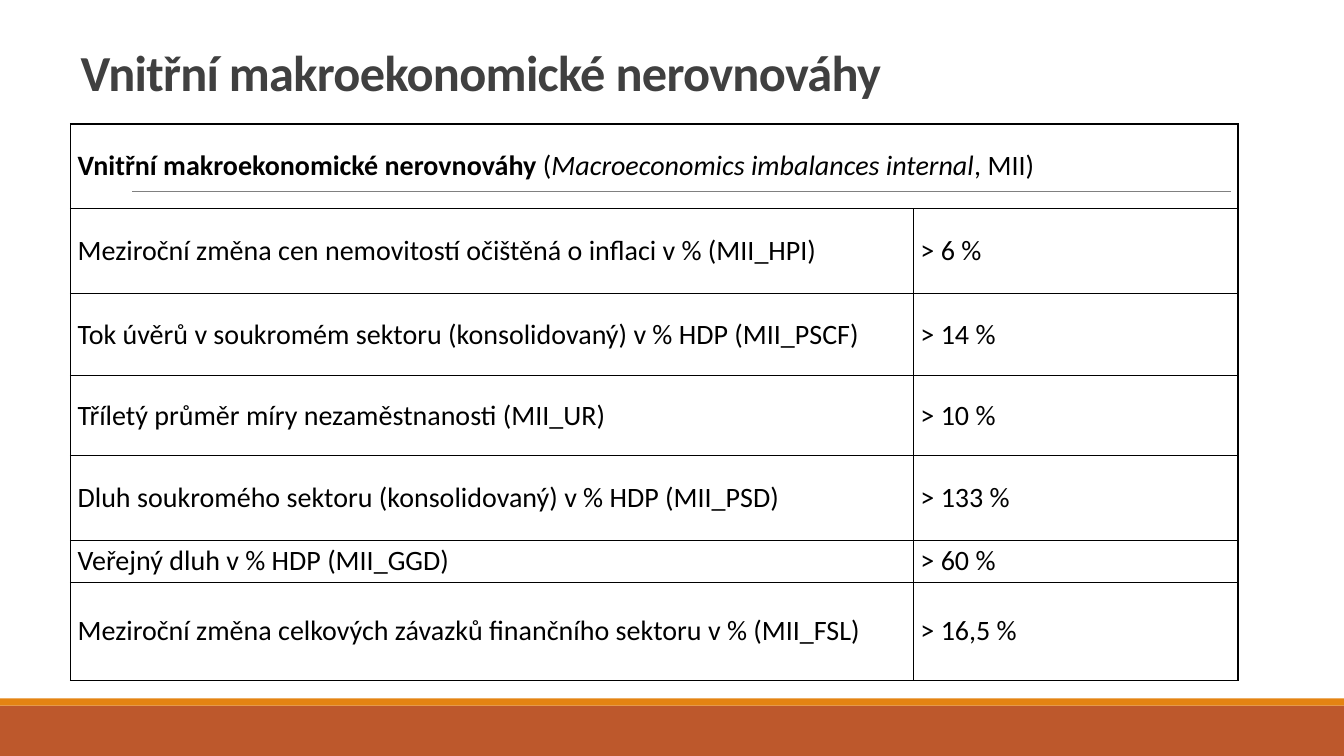
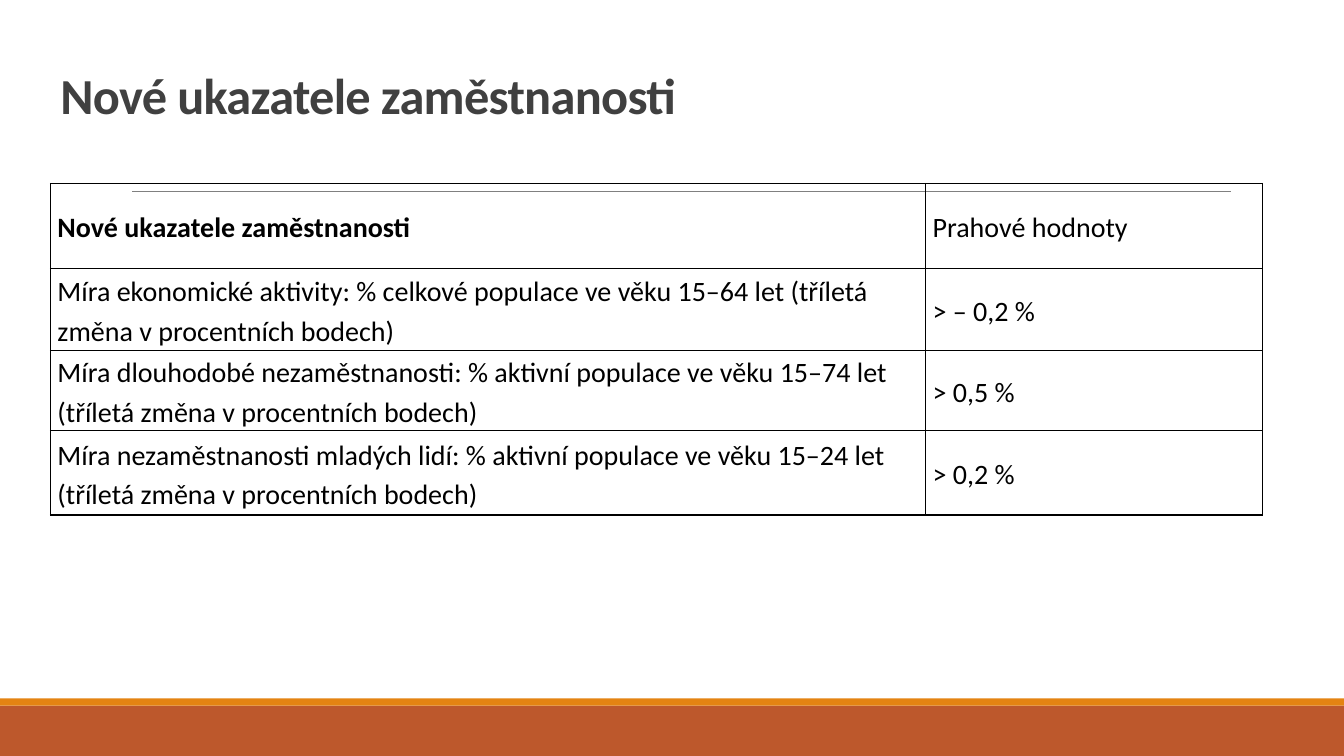
from lxml.etree import SubElement
from pptx import Presentation
from pptx.dml.color import RGBColor
from pptx.enum.shapes import MSO_CONNECTOR, MSO_SHAPE
from pptx.enum.text import MSO_ANCHOR, PP_ALIGN
from pptx.oxml.ns import qn
from pptx.util import Inches, Pt

RUST = RGBColor(0xBD, 0x58, 0x2C)
ORANGE = RGBColor(0xE4, 0x83, 0x12)
GRAY = RGBColor(0x80, 0x80, 0x80)
DARK = RGBColor(0x40, 0x40, 0x40)
BLACK = RGBColor(0, 0, 0)
FONT = "Calibri"

# Each cell is a list of (text, style) runs; a row of one cell spans the table.
SLIDES = [
    {
        "title": "Vnitřní makroekonomické nerovnováhy",
        "place": (0.7, 0.3, 11.58, 0.76),
        "corner": (0.7, 1.23),
        "cols": [8.36, 3.22],
        "heights": [0.84, 0.84, 0.82, 0.79, 0.84, 0.42, 0.97],
        "para": {"alignment": PP_ALIGN.JUSTIFY},
        "rows": [
            [[("Vnitřní makroekonomické nerovnováhy ", "b"), ("(", ""),
              ("Macroeconomics imbalances internal", "i"), (", MII)", "")]],
            [[("Meziroční změna cen nemovitostí očištěná o inflaci v % (MII_HPI)", "")],
             [("> 6 %", "")]],
            [[("Tok úvěrů v soukromém sektoru (konsolidovaný) v % HDP (MII_PSCF)", "")],
             [("> 14 %", "")]],
            [[("Tříletý průměr míry nezaměstnanosti (MII_UR)", "")],
             [("> 10 %", "")]],
            [[("Dluh soukromého sektoru (konsolidovaný) v % HDP (MII_PSD)", "")],
             [("> 133 %", "")]],
            [[("Veřejný dluh v % HDP (MII_GGD)", "")],
             [("> 60 %", "")]],
            [[("Meziroční změna celkových závazků finančního sektoru v % (MII_FSL)", "")],
             [("> 16,5 %", "")]],
        ],
    },
    {
        "title": "Nové ukazatele zaměstnanosti",
        "place": (0.5, 0.53, 11.79, 0.76),
        "corner": (0.5, 1.82),
        "cols": [8.68, 3.34],
        "heights": [0.84, 0.82, 0.79, 0.84],
        "para": {"line_spacing": 1.15, "space_after": Pt(10)},
        "rows": [
            [[("Nové ukazatele zaměstnanosti", "b")],
             [("Prahové hodnoty", "")]],
            [[("Míra ekonomické aktivity: % celkové populace ve věku 15–64 let "
               "(tříletá změna v procentních bodech)", "")],
             [("> – 0,2 %", "")]],
            [[("Míra dlouhodobé nezaměstnanosti: % aktivní populace ve věku 15–74 let "
               "(tříletá změna v procentních bodech)", "")],
             [("> 0,5 %", "")]],
            [[("Míra nezaměstnanosti mladých lidí: % aktivní populace ve věku 15–24 let "
               "(tříletá změna v procentních bodech)", "")],
             [("> 0,2 %", "")]],
        ],
    },
]


def add_run(para, text, size, color, style):
    run = para.add_run()
    run.text = text
    run.font.name = FONT
    run.font.size = Pt(size)
    run.font.color.rgb = color
    run.font.bold = "b" in style
    run.font.italic = "i" in style
    return run


def frame_cell(cell):
    """Give a cell thin black borders, narrow margins and no fill."""
    props = cell._tc.get_or_add_tcPr()
    for side in ("lnL", "lnR", "lnT", "lnB"):
        line = SubElement(props, qn("a:" + side), w=str(Pt(1)))
        fill = SubElement(line, qn("a:solidFill"))
        SubElement(fill, qn("a:srgbClr"), val=str(BLACK))
    cell.fill.background()
    cell.vertical_anchor = MSO_ANCHOR.MIDDLE
    cell.margin_left = cell.margin_right = Inches(0.07)
    cell.margin_top = cell.margin_bottom = 0


deck = Presentation()
deck.slide_width = Inches(13.33)
deck.slide_height = Inches(7.5)
layout = deck.slide_layouts[5]
pages = [deck.slides.add_slide(layout) for _ in SLIDES]

# Bands and rule are drawn once, then moved to the shared layout.
shapes = pages[0].shapes
for top, height, color in [(7, 0.5, RUST), (6.93, 0.07, ORANGE)]:
    band = shapes.add_shape(MSO_SHAPE.RECTANGLE, 0, Inches(top),
                            deck.slide_width, Inches(height))
    band.shadow.inherit = False
    band.fill.solid()
    band.fill.fore_color.rgb = color
    band.line.fill.background()
    layout.shapes.element.append(band.element)
rule = shapes.add_connector(MSO_CONNECTOR.STRAIGHT, Inches(1.31), Inches(1.9),
                            Inches(12.21), Inches(1.9))
rule.line.color.rgb = GRAY
rule.line.width = Pt(0.5)
SubElement(rule.element.spPr, qn("a:effectLst"))
layout.shapes.element.append(rule.element)

for page, data in zip(pages, SLIDES):
    title = page.shapes.title
    title.left, title.top, title.width, title.height = map(Inches, data["place"])
    title.text_frame.vertical_anchor = MSO_ANCHOR.BOTTOM
    para = title.text_frame.paragraphs[0]
    para.alignment = PP_ALIGN.LEFT
    para.line_spacing = 0.85
    run = add_run(para, data["title"], 36, DARK, "b")
    run.font._element.set("spc", "-50")

    cols, heights, rows = data["cols"], data["heights"], data["rows"]
    left, top = data["corner"]
    table = page.shapes.add_table(len(rows), len(cols), Inches(left), Inches(top),
                                  Inches(sum(cols)), Inches(sum(heights))).table
    table.first_row = table.horz_banding = False
    for col, width in zip(table.columns, cols):
        col.width = Inches(width)
    for row, height, texts in zip(table.rows, heights, rows):
        row.height = Inches(height)
        for cell in row.cells:
            frame_cell(cell)
        if len(texts) == 1:
            row.cells[0].merge(row.cells[len(cols) - 1])
        for cell, runs in zip(row.cells, texts):
            para = cell.text_frame.paragraphs[0]
            for name, value in data["para"].items():
                setattr(para, name, value)
            for text, style in runs:
                add_run(para, text, 20, BLACK, style)

deck.save("out.pptx")
